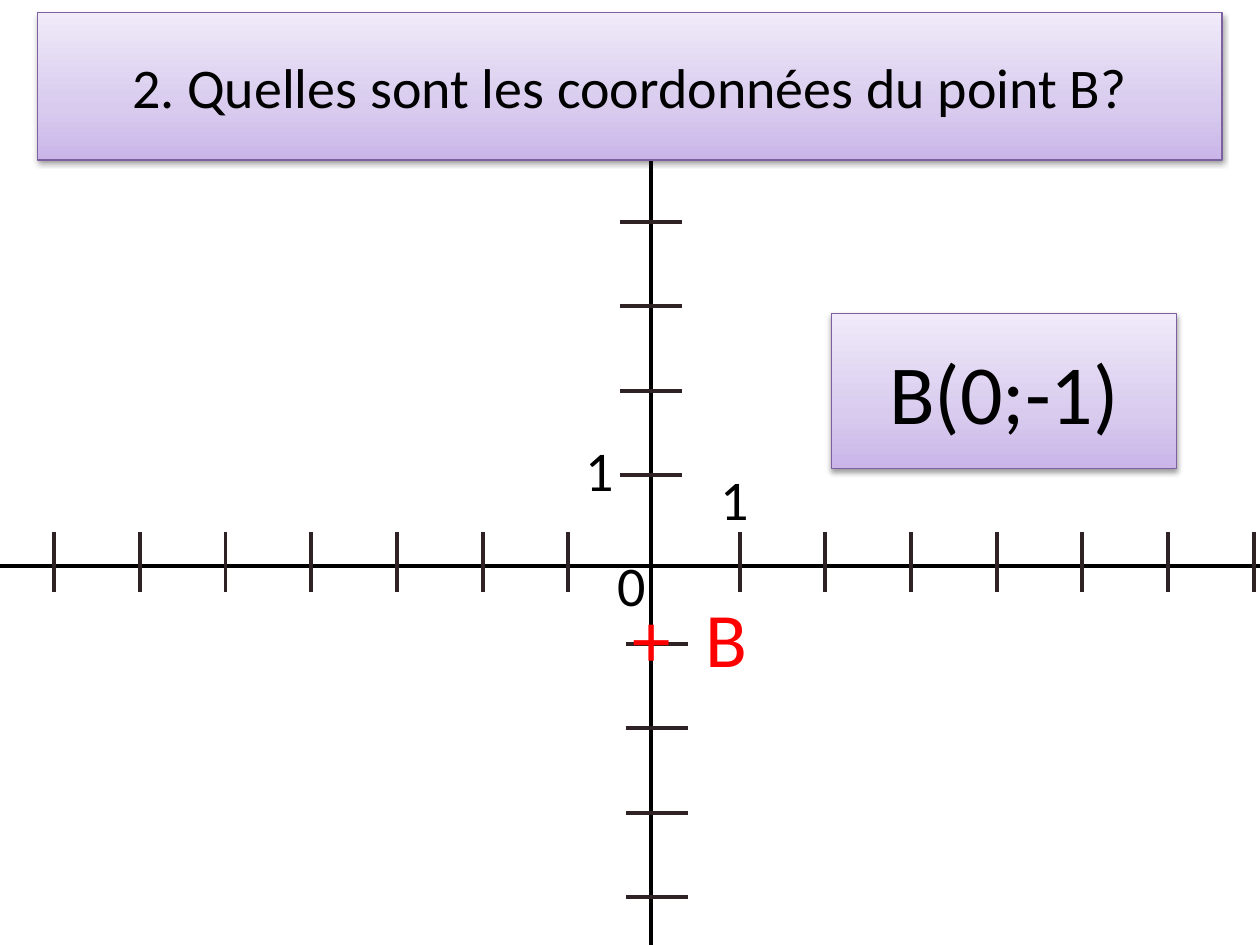
import copy

import pptx
import pptx.dml.color
import pptx.enum.shapes
import pptx.enum.text
import pptx.oxml
import pptx.oxml.ns
import pptx.util

Inches = pptx.util.Inches
Pt = pptx.util.Pt
RGBColor = pptx.dml.color.RGBColor
qn = pptx.oxml.ns.qn

BLACK = RGBColor(0x00, 0x00, 0x00)
RED = RGBColor(0xFF, 0x00, 0x00)
TICK = RGBColor(0x2E, 0x22, 0x24)
BORDER = RGBColor(0x7D, 0x60, 0xA0)
LILAC_STOPS = [
    (0, RGBColor(0xC9, 0xB5, 0xE8)),
    (0.35, RGBColor(0xD8, 0xCB, 0xEE)),
    (1, RGBColor(0xF0, 0xEA, 0xF9)),
]
SHADOW = (
    f'<a:outerShdw {pptx.oxml.ns.nsdecls("a")} blurRad="{Pt(3.1)}" dist="{Pt(1.6)}" '
    'dir="5400000" rotWithShape="0"><a:srgbClr val="000000">'
    '<a:alpha val="38000"/></a:srgbClr></a:outerShdw>'
)


class Board:
    font = "Calibri"
    line_width = Pt(2.25)

    def __init__(self, slide):
        self.slide = slide

    def line(self, x1, y1, x2, y2, color):
        line = self.slide.shapes.add_connector(
            pptx.enum.shapes.MSO_CONNECTOR.STRAIGHT,
            Inches(x1), Inches(y1), Inches(x2), Inches(y2))
        line.line.color.rgb = color
        line.line.width = self.line_width
        properties = line.element.spPr
        properties.append(properties.makeelement(qn("a:effectLst"), {}))

    def add_span(self, para, text, size, color):
        span = para.add_run()
        span.text = text
        span.font.name = self.font
        span.font.size = Pt(size)
        span.font.color.rgb = color

    def label(self, text, left, top, width, height, size=32, color=BLACK):
        box = self.slide.shapes.add_textbox(
            Inches(left), Inches(top), Inches(width), Inches(height))
        frame = box.text_frame
        frame.word_wrap = True
        frame.auto_size = pptx.enum.text.MSO_AUTO_SIZE.SHAPE_TO_FIT_TEXT
        self.add_span(frame.paragraphs[0], text, size, color)
        return box

    def panel(self, text, left, top, width, height, size):
        """Draw a lilac gradient box with a soft shadow and centred text."""
        panel = self.slide.shapes.add_shape(
            pptx.enum.shapes.MSO_SHAPE.RECTANGLE,
            Inches(left), Inches(top), Inches(width), Inches(height))
        panel.fill.gradient()
        panel.fill.gradient_angle = 90
        stop_list = panel.element.spPr.find(".//" + qn("a:gsLst"))
        stop_list.append(copy.deepcopy(stop_list[0]))
        for stop, (position, color) in zip(panel.fill.gradient_stops, LILAC_STOPS):
            stop.position = position
            stop.color.rgb = color
        panel.line.color.rgb = BORDER
        panel.line.width = Pt(0.75)
        panel.shadow.inherit = False
        effects = panel.element.spPr.find(qn("a:effectLst"))
        effects.append(pptx.oxml.parse_xml(SHADOW))

        frame = panel.text_frame
        frame.word_wrap = True
        frame.vertical_anchor = pptx.enum.text.MSO_ANCHOR.MIDDLE
        para = frame.paragraphs[0]
        para.alignment = pptx.enum.text.PP_ALIGN.CENTER
        self.add_span(para, text, size, BLACK)


def set_tab(para, position):
    properties = para._p.get_or_add_pPr()
    tabs = properties.makeelement(qn("a:tabLst"), {})
    tabs.append(tabs.makeelement(
        qn("a:tab"), {"pos": str(Inches(position)), "algn": "l"}))
    properties.append(tabs)


def draw_axes(board):
    board.line(-0.49, 4.49, 11.12, 4.49, BLACK)
    board.line(5.17, 8.7, 5.17, 0.24, BLACK)
    origin_column, origin_row = 7, 4
    for column in range(15):
        if column != origin_column:
            x = 0.43 + 0.68 * column
            board.line(x, 4.22, x, 4.7, TICK)
    for row in range(9):
        if row != origin_row:
            y = 1.76 + 0.67 * row
            left = 4.92 if row < origin_row else 4.97
            board.line(left, y, left + 0.49, y, TICK)


def main():
    deck = pptx.Presentation()
    deck.slide_width = Inches(10)
    deck.slide_height = Inches(7.5)
    board = Board(deck.slides.add_slide(deck.slide_layouts[6]))

    draw_axes(board)
    point = board.label("+\tB", 4.92, 4.64, 1.52, 0.84, 44, RED)
    set_tab(point.text_frame.paragraphs[0], 0.58)
    board.panel("2. Quelles sont les coordonnées du point B?", 0.3, 0.1, 9.4, 1.17, 32)
    for text, left, top in [("1", 4.55, 3.41), ("1", 5.62, 3.64), ("0", 4.8, 4.32)]:
        board.label(text, left, top, 0.5, 0.64)
    board.panel("B(0;-1)", 6.6, 2.49, 2.74, 1.23, 48)

    deck.save("out.pptx")


if __name__ == "__main__":
    main()
